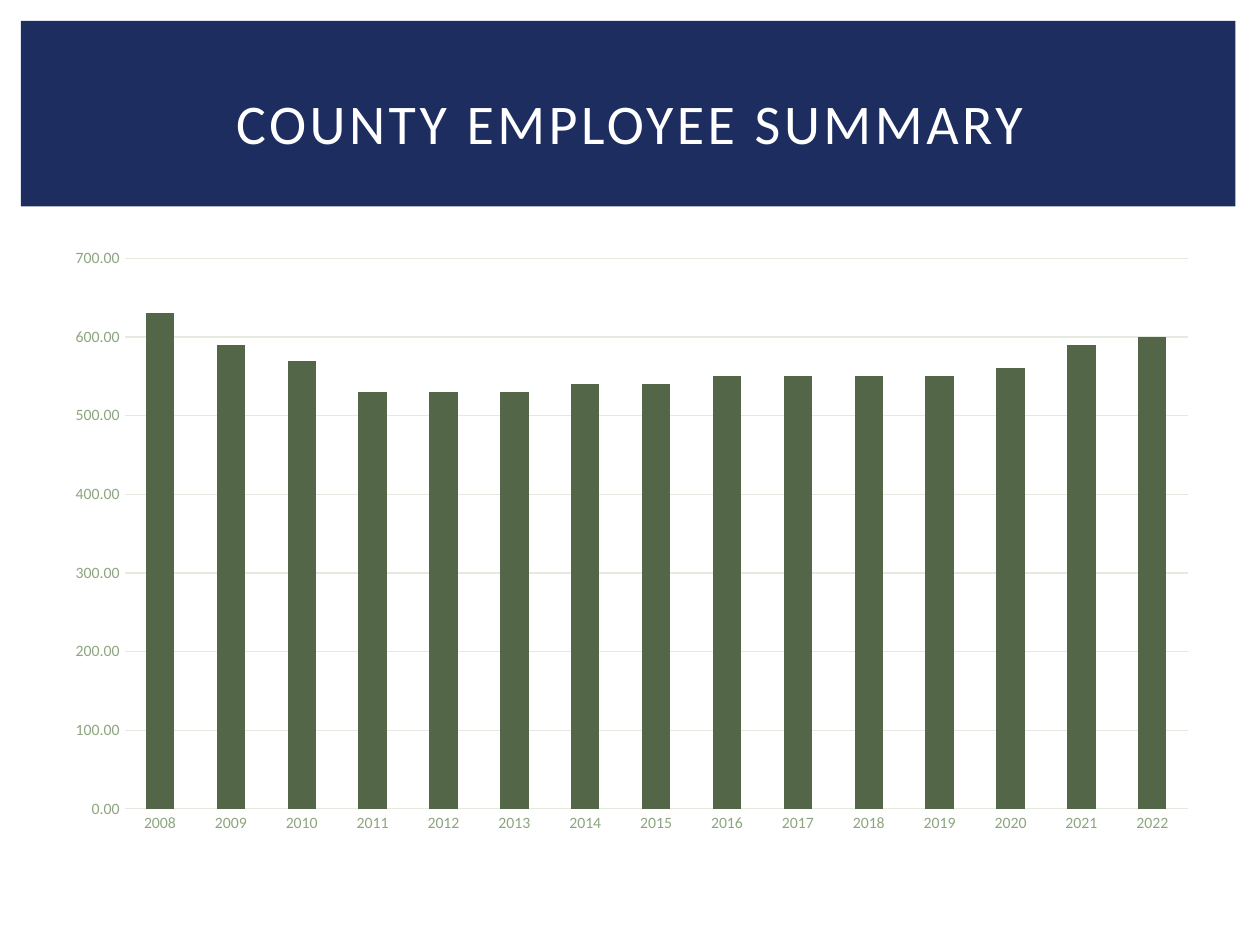
import pptx
import pptx.chart.data
import pptx.dml.color
import pptx.enum.chart
import pptx.enum.shapes
import pptx.enum.text
import pptx.util

Pt = pptx.util.Pt
NAVY, WHITE = "1D2D60", "FFFFFF"
GREEN, SAGE, PALE = "536648", "8DA57F", "E5EAE1"
HEADCOUNT = [630, 590, 570, 530, 530, 530, 540, 540, 550, 550, 550, 550, 560, 590, 600]
YEARS = [str(2008 + index) for index in range(len(HEADCOUNT))]


def color(value):
    return pptx.dml.color.RGBColor.from_string(value)


class SlideBuilder:
    font_name = "Calibri"

    def __init__(self, slide):
        self.slide = slide

    def style_font(self, font, size, value):
        font.name, font.size, font.bold = self.font_name, Pt(size), False
        font.color.rgb = color(value)

    def band(self, left, top, width, height, fill):
        banner = self.slide.shapes.add_shape(
            pptx.enum.shapes.MSO_SHAPE.RECTANGLE, Pt(left), Pt(top), Pt(width), Pt(height))
        banner.shadow.inherit = False
        banner.fill.solid()
        banner.fill.fore_color.rgb = color(fill)
        banner.line.fill.background()

    def title(self, text, left, top, width, height):
        heading = self.slide.shapes.title
        heading.left, heading.top = Pt(left), Pt(top)
        heading.width, heading.height = Pt(width), Pt(height)
        frame = heading.text_frame
        frame.text = text
        frame.word_wrap = True
        frame.vertical_anchor = pptx.enum.text.MSO_ANCHOR.MIDDLE
        paragraph = frame.paragraphs[0]
        paragraph.alignment = pptx.enum.text.PP_ALIGN.CENTER
        run = paragraph.runs[0]
        self.style_font(run.font, 32, WHITE)
        run.font._element.set("spc", "200")
        self.slide.shapes._spTree.append(heading._element)

    def style_axis(self, axis):
        axis.major_tick_mark = axis.minor_tick_mark = pptx.enum.chart.XL_TICK_MARK.NONE
        axis.format.line.fill.background()
        self.style_font(axis.tick_labels.font, 9, SAGE)

    def column_chart(self, categories, values, left, top, width, height):
        data = pptx.chart.data.CategoryChartData(number_format="#,##0.00")
        data.categories = categories
        data.add_series("Series 1", values)
        chart = self.slide.shapes.add_chart(
            pptx.enum.chart.XL_CHART_TYPE.COLUMN_STACKED,
            Pt(left), Pt(top), Pt(width), Pt(height), data).chart
        chart.has_title = chart.has_legend = False
        self.style_font(chart.font, 10, GREEN)
        plot = chart.plots[0]
        plot.gap_width, plot.overlap, plot.vary_by_categories = 150, 100, False
        columns = plot.series[0].format.fill
        columns.solid()
        columns.fore_color.rgb = color(GREEN)
        self.style_axis(chart.category_axis)
        scale = chart.value_axis
        self.style_axis(scale)
        scale.minimum_scale, scale.maximum_scale, scale.major_unit = 0, 700, 100
        scale.tick_labels.number_format = "#,##0.00"
        scale.tick_labels.number_format_is_linked = False
        grid = scale.major_gridlines.format.line
        grid.color.rgb, grid.width = color(PALE), Pt(0.75)


def main():
    deck = pptx.Presentation()
    deck.slide_width, deck.slide_height = Pt(720), Pt(540)
    builder = SlideBuilder(deck.slides.add_slide(deck.slide_layouts[5]))
    builder.band(12, 12, 694, 106, NAVY)
    builder.column_chart(YEARS, HEADCOUNT, 30, 135.5, 662, 347)
    builder.title("COUNTY EMPLOYEE SUMMARY", 30, 28, 660, 83)
    deck.save("out.pptx")


if __name__ == "__main__":
    main()
